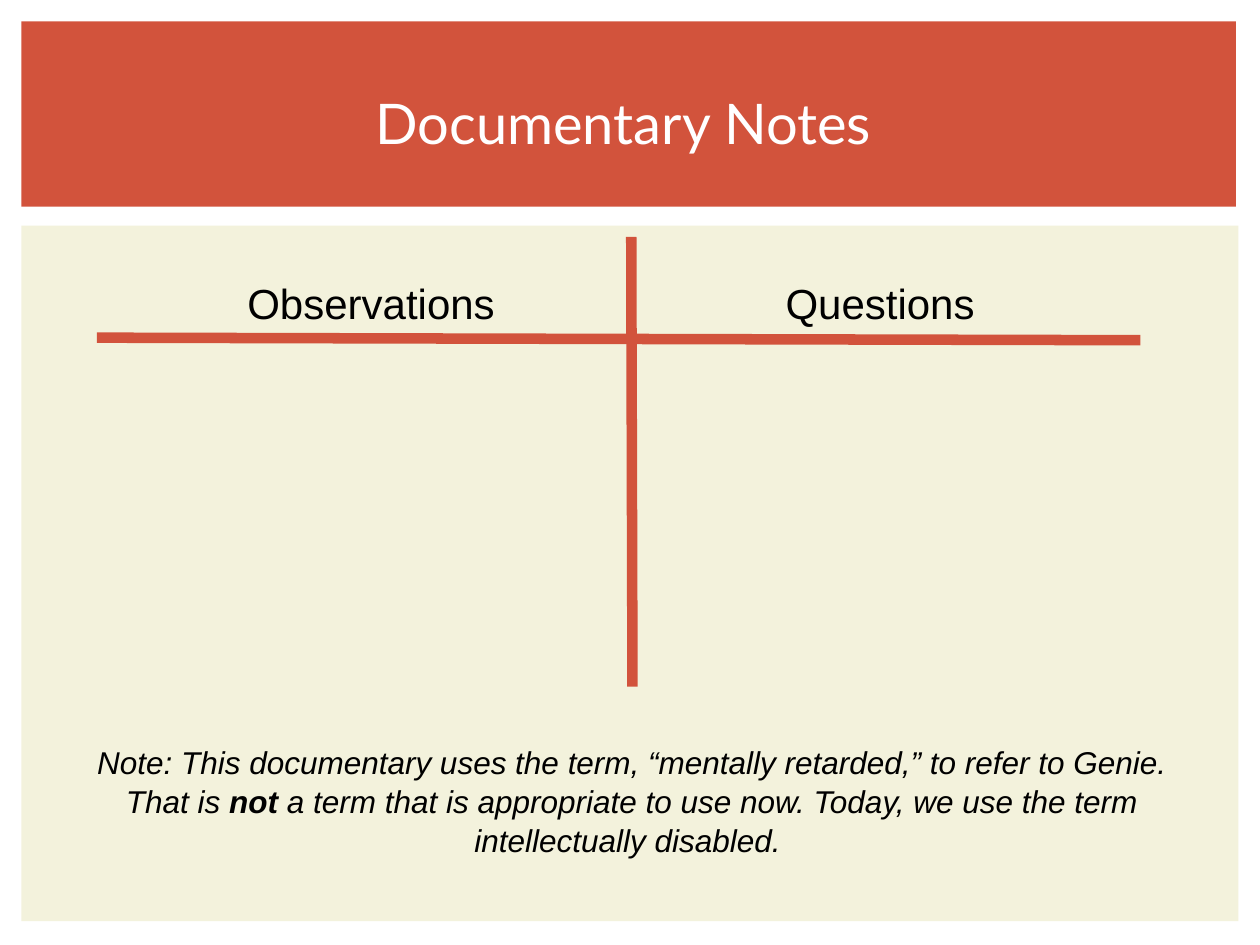
from pptx import Presentation
from pptx.dml.color import RGBColor
from pptx.enum.shapes import MSO_CONNECTOR, MSO_SHAPE
from pptx.enum.text import MSO_ANCHOR, MSO_AUTO_SIZE, PP_ALIGN
from pptx.oxml.ns import qn
from pptx.util import Inches, Pt
from lxml import etree

RECTANGLE = MSO_SHAPE.RECTANGLE
STRAIGHT = MSO_CONNECTOR.STRAIGHT
CENTER = PP_ALIGN.CENTER
TOP, MIDDLE = MSO_ANCHOR.TOP, MSO_ANCHOR.MIDDLE
NO_AUTOFIT = MSO_AUTO_SIZE.NONE
TITLE_ONLY = 5

# The slide is a grid of 100 columns by 75 rows
COLUMNS, ROWS, CELL = 100, 75, 0.1


def color(value):
    return RGBColor.from_string(value)


def grid(*cells):
    return [Inches(cell * CELL) for cell in cells]


class NotesSlide:
    accent, paper, ink, light = "D2533C", "F3F2DC", "000000", "FFFFFF"
    body_font, title_font = "Arial", "Lato"

    def __init__(self, presentation):
        layout = presentation.slide_layouts[TITLE_ONLY]
        self.slide = presentation.slides.add_slide(layout)
        self.shapes = self.slide.shapes

    def panel(self, box, fill):
        shape = self.shapes.add_shape(RECTANGLE, *grid(*box))
        shape.shadow.inherit = False
        shape.fill.solid()
        shape.fill.fore_color.rgb = color(fill)
        shape.line.fill.background()

    def rule(self, start, end, width=6):
        connector = self.shapes.add_connector(STRAIGHT, *grid(*start, *end))
        connector.line.color.rgb = color(self.accent)
        connector.line.width = Pt(width)
        etree.SubElement(connector._element.spPr, qn("a:effectLst"))

    def fill_text(self, shape, runs, size, font, ink, anchor=TOP):
        frame = shape.text_frame
        frame.word_wrap = True
        frame.auto_size = NO_AUTOFIT
        frame.vertical_anchor = anchor
        frame.margin_left = frame.margin_right = Inches(0.1)
        frame.margin_top = frame.margin_bottom = Inches(0.1)
        paragraph = frame.paragraphs[0]
        paragraph.alignment = CENTER
        paragraph.font.name = font
        paragraph.font.size = Pt(size)
        paragraph.font.color.rgb = color(ink)
        for text, bold in runs:
            run = paragraph.add_run()
            run.text = text
            if bold:
                run.font.bold = True
        return paragraph

    def title(self, text, box):
        shape = self.shapes.title
        shape.left, shape.top, shape.width, shape.height = grid(*box)
        self.fill_text(shape, [(text, False)], 32, self.title_font, self.light, MIDDLE)
        # Bring the title in front of its band
        self.shapes._spTree.append(shape._element)

    def text(self, runs, box, size):
        shape = self.shapes.add_textbox(*grid(*box))
        return self.fill_text(shape, runs, size, self.body_font, self.ink)


def main():
    presentation = Presentation()
    presentation.slide_width, presentation.slide_height = grid(COLUMNS, ROWS)
    notes = NotesSlide(presentation)

    # Background panels and title
    notes.panel((1.7, 17.9, 96.6, 55.2), notes.paper)
    notes.panel((1.7, 1.7, 96.4, 14.7), notes.accent)
    notes.title("Documentary Notes ", (4.2, 3.9, 91.7, 11.5))

    # Note below the chart
    note = notes.text(
        [
            ("Note: This documentary uses the term, “mentally retarded,” to refer "
             "to Genie. That is ", False),
            ("not ", True),
            ("a term that is appropriate to use now. Today, we use the term "
             "intellectually disabled. ", False),
        ],
        (4.2, 57.9, 91.9, 11), 18)
    note.font.italic = True
    note.line_spacing = 1.03

    # T-chart lines and headings
    notes.rule((7.7, 26.8), (90.5, 27))
    notes.rule((50.1, 18.8), (50.2, 54.5))
    for heading, left in (("Observations", 8.8), ("Questions", 49.2)):
        notes.text([(heading, False)], (left, 21, 41.3, 7), 24)

    presentation.save("out.pptx")


if __name__ == "__main__":
    main()
